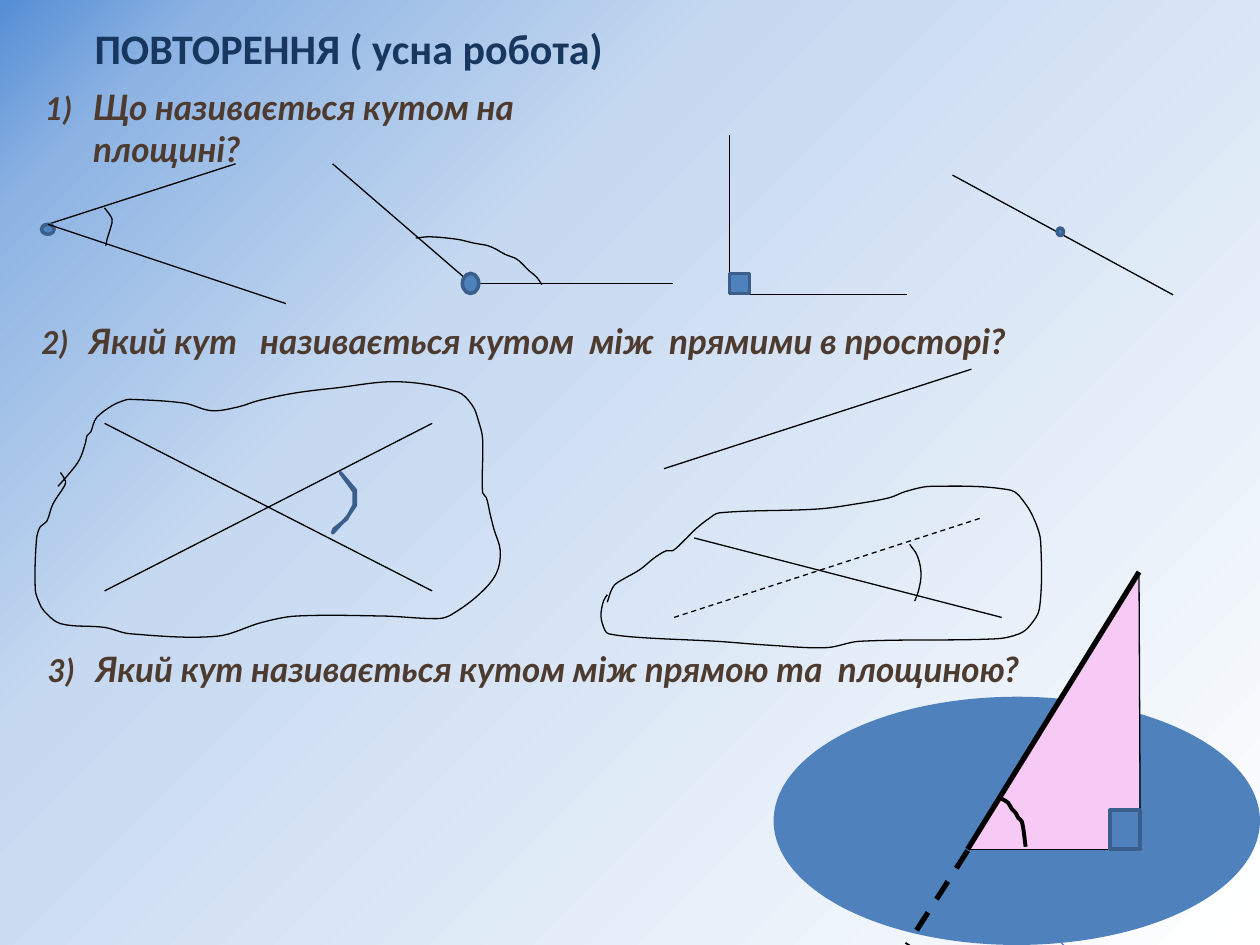
from math import dist, hypot

from lxml import etree
from pptx import Presentation
from pptx.dml.color import RGBColor
from pptx.enum.dml import MSO_LINE
from pptx.enum.shapes import MSO_CONNECTOR as Connector, MSO_SHAPE as Shape
from pptx.enum.text import MSO_ANCHOR as Anchor, PP_ALIGN as Align
from pptx.oxml import parse_xml
from pptx.oxml.ns import nsdecls, qn
from pptx.util import Inches, Pt

BLACK, BLUE, EDGE, PINK = "000000", "4F81BD", "3A5F8C", "F6CAF4"
NAVY, BROWN, STEEL = "17375E", "4E3B30", "4B7EBC"
STOPS = [(0, "558ED5"), (10, "8EB4E3"), (34, "C6D9F1"), (100, "FFFFFF")]
FLAT_BLOB = [
    (0.18, 0.93), (0.26, 0.84), (0.35, 0.72), (0.4, 0.58), (0.41, 0.53), (0.44, 0.5),
    (0.46, 0.44), (0.49, 0.38), (0.61, 0.29), (0.7, 0.25), (0.75, 0.24), (1.18, 0.27),
    (1.4, 0.33), (1.61, 0.3), (1.77, 0.25), (2.06, 0.19), (2.38, 0.15), (2.88, 0.1),
    (3.35, 0.18), (3.47, 0.29), (3.52, 0.42), (3.55, 0.55), (3.55, 0.98), (3.58, 1.02),
    (3.61, 1.15), (3.64, 1.27), (3.69, 1.44), (3.66, 1.62), (3.52, 1.79), (3.3, 1.95),
    (3.2, 1.98), (2.77, 1.96), (2.07, 1.96), (1.8, 2.01), (1.44, 2.12), (0.75, 2.1),
    (0.55, 2.05), (0.2, 2.02), (0.07, 1.92), (0.03, 1.85), (0, 1.75), (0.01, 1.35),
    (0.04, 1.25), (0.09, 1.21), (0.14, 1.07), (0.23, 0.93), (0.24, 0.89), (0.2, 0.82)]
SKEW_BLOB = [
    (0.05, 1.85), (0.08, 1.76), (0.11, 1.71), (0.17, 1.67), (0.31, 1.59), (0.42, 1.5),
    (0.52, 1.44), (0.57, 1.44), (0.66, 1.36), (0.75, 1.27), (0.85, 1.19), (0.94, 1.14),
    (1.72, 1.11), (2.02, 1.07), (2.29, 1.02), (2.42, 0.97), (2.62, 0.93), (3.25, 0.96),
    (3.37, 1.07), (3.45, 1.22), (3.49, 1.37), (3.48, 1.9), (3.4, 2.04), (3.32, 2.1),
    (3.14, 2.14), (2.05, 2.16), (1.79, 2.21), (1.32, 2.19), (0.92, 2.16), (0.32, 2.13),
    (0.06, 2.1), (0.03, 2.07), (0, 1.96), (0.02, 1.84), (0.05, 1.79)]


def color(value):
    return RGBColor.from_string(value)


def paint(shape, fill=None, edge=None, width=2):
    shape.shadow.inherit = False
    if fill:
        shape.fill.solid()
        shape.fill.fore_color.rgb = color(fill)
    else:
        shape.fill.background()
    if edge:
        shape.line.color.rgb = color(edge)
        shape.line.width = Pt(width)
    else:
        shape.line.fill.background()


def add_mark(page, box, kind, x, y, width, height, edge=EDGE):
    mark = page.shapes.add_shape(kind, Inches(box[0] + x), Inches(box[1] + y),
                                 Inches(width), Inches(height))
    paint(mark, BLUE, edge)


def add_line(page, box, start, end, width=0.75, dash=False, edge=BLACK):
    line = page.shapes.add_connector(
        Connector.STRAIGHT, Inches(box[0] + start[0]), Inches(box[1] + start[1]),
        Inches(box[0] + end[0]), Inches(box[1] + end[1]))
    line.line.color.rgb = color(edge)
    line.line.width = Pt(width)
    if dash:
        line.line.dash_style = MSO_LINE.DASH
    etree.SubElement(line._element.spPr, qn("a:effectLst"))


def add_outline(page, box, points, fill=None, edge=None, width=0.75, close=False):
    places = [(Inches(box[0] + x), Inches(box[1] + y)) for x, y in points]
    builder = page.shapes.build_freeform(*places[0])
    builder.add_line_segments(places[1:], close=close)
    outline = builder.convert_to_shape()
    paint(outline, fill, edge, width)
    return outline


def curve_points(points):
    result = [points[0]]
    padded = [points[0], *points, points[-1]]
    handles = []
    for before, here, after in zip(padded, padded[1:], padded[2:]):
        across, down = after[0] - before[0], after[1] - before[1]
        handles.append((across / hypot(across, down) / 3, down / hypot(across, down) / 3))
    for start, end, leave, arrive in zip(points, points[1:], handles, handles[1:]):
        reach = dist(start, end)
        result += [(start[0] + leave[0] * reach, start[1] + leave[1] * reach),
                   (end[0] - arrive[0] * reach, end[1] - arrive[1] * reach), end]
    return result


def add_curve(page, box, points, width=0.75):
    curve = add_outline(page, box, curve_points(points), edge=BLACK, width=width)
    segments = list(curve._element.iter(qn("a:lnTo")))
    for first in range(0, len(segments), 3):
        bend = etree.Element(qn("a:cubicBezTo"))
        segments[first].addprevious(bend)
        for segment in segments[first:first + 3]:
            bend.append(segment[0])
            segment.getparent().remove(segment)


def style_span(span, font, size, value, italic=False):
    span.font.name, span.font.size = font, Pt(size)
    span.font.bold, span.font.italic = True, italic
    span.font.color.rgb = color(value)


def set_background(page):
    page.background.fill.gradient()
    gradient = page._element.find(".//" + qn("a:gradFill"))
    stops = "".join(f'<a:gs pos="{spot * 1000}"><a:srgbClr val="{value}"/></a:gs>'
                    for spot, value in STOPS)
    gradient.getparent().replace(gradient, parse_xml(
        f'<a:gradFill {nsdecls("a")} rotWithShape="1"><a:gsLst>{stops}</a:gsLst>'
        '<a:path path="circle"><a:fillToRect r="100000" b="100000"/></a:path></a:gradFill>'))


def place_title(page, left, top, width, height):
    title = page.shapes.title
    title.left, title.top = Inches(left), Inches(top)
    title.width, title.height = Inches(width), Inches(height)
    frame = title.text_frame
    frame.text = "ПОВТОРЕННЯ ( усна робота)"
    frame.word_wrap = False
    frame.vertical_anchor = Anchor.TOP
    para = frame.paragraphs[0]
    para.alignment = Align.LEFT
    style_span(para.runs[0], "Calibri", 24, NAVY)


def place_question(page, number, text, left, top, width):
    box = page.shapes.add_textbox(Inches(left), Inches(top), Inches(width), Inches(0.44))
    box.text_frame.word_wrap = True
    para = box.text_frame.paragraphs[0]
    indent = Inches(0.38)
    properties = para._p.get_or_add_pPr()
    properties.set("marL", str(indent))
    properties.set("indent", str(-indent))
    tabs = etree.SubElement(properties, qn("a:tabLst"))
    etree.SubElement(tabs, qn("a:tab"), pos=str(Inches(0.32)), algn="l")
    for words, size in ((f"{number})\t", 18), (text, 20)):
        span = para.add_run()
        span.text = words
        style_span(span, "Lato", size, BROWN, italic=True)


def draw_acute_angle(page, *box):
    vertex = (0.05, 0.48)
    add_line(page, box, vertex, (1.54, 0))
    add_mark(page, box, Shape.OVAL, 0, 0.48, 0.1, 0.08)
    add_line(page, box, vertex, (1.94, 1.11))
    add_curve(page, box, [(0.5, 0.35), (0.56, 0.44), (0.55, 0.5), (0.52, 0.6), (0.51, 0.65)])


def draw_obtuse_angle(page, *box):
    vertex = (1.1, 0.95)
    add_curve(page, box, [(0.66, 0.59), (0.77, 0.58), (0.99, 0.6), (1.12, 0.63), (1.23, 0.65),
                          (1.3, 0.68), (1.37, 0.72), (1.45, 0.75), (1.48, 0.77), (1.53, 0.82),
                          (1.56, 0.85), (1.62, 0.9), (1.66, 0.96)])
    add_line(page, box, (0, 0), vertex)
    add_line(page, box, vertex, (2.7, 0.95))
    add_mark(page, box, Shape.OVAL, 1.03, 0.87, 0.13, 0.16)


def draw_right_angle(page, *box):
    vertex = (0, 1.27)
    add_line(page, box, (0, 0), vertex)
    add_line(page, box, vertex, (1.41, 1.27))
    add_mark(page, box, Shape.RECTANGLE, 0, 1.1, 0.16, 0.16)


def draw_straight_angle(page, *box):
    add_line(page, box, (0, 0), (1.75, 0.95))
    add_mark(page, box, Shape.OVAL, 0.83, 0.42, 0.05, 0.06)


def draw_crossing_lines(page, *box):
    add_line(page, box, (0.55, 0.43), (3.15, 1.76))
    add_line(page, box, (0.55, 1.76), (3.15, 0.43))
    add_outline(page, box, [(2.42, 0.82), (2.53, 0.97), (2.53, 1.08), (2.47, 1.19),
                            (2.37, 1.27), (2.36, 1.3), (2.48, 1.17), (2.54, 1.08),
                            (2.54, 0.96)], BLUE, EDGE, 2, close=True)
    add_curve(page, box, FLAT_BLOB)


def draw_skew_lines(page, *box):
    add_line(page, box, (0.58, 1.97), (3.02, 1.18), dash=True)
    add_line(page, box, (0.5, 0.79), (2.94, 0))
    add_line(page, box, (0.74, 1.34), (3.18, 1.97))
    add_curve(page, box, SKEW_BLOB)
    add_curve(page, box, [(2.45, 1.39), (2.51, 1.48), (2.54, 1.62), (2.52, 1.76), (2.49, 1.84)])


def draw_line_and_plane(page, *box):
    top, foot, corner = (2.9, 0), (1.54, 2.2), (2.9, 2.2)
    add_line(page, box, foot, (2.54, 3.2), edge=STEEL)
    add_mark(page, box, Shape.OVAL, 0, 0.99, 3.86, 1.97, edge=None)
    add_outline(page, box, [top, corner, foot], PINK, close=True)
    add_line(page, box, top, foot, 3)
    add_line(page, box, top, (2.91, 2.2))
    add_line(page, box, (1.54, 2.21), (1.06, 2.96), 3, dash=True)
    add_line(page, box, foot, corner)
    add_mark(page, box, Shape.RECTANGLE, 2.67, 1.89, 0.24, 0.31)
    add_curve(page, box, [(1.81, 1.8), (1.86, 1.83), (1.89, 1.88), (1.92, 1.91), (1.94, 1.95),
                          (1.97, 1.98), (2, 2.18)], 2.25)


def main():
    deck = Presentation()
    deck.slide_width, deck.slide_height = Inches(10), Inches(7.5)
    page = deck.slides.add_slide(deck.slide_layouts[5])
    set_background(page)
    place_title(page, 0.65, 0.13, 4.27, 0.5)
    place_question(page, 1, "Що називається кутом на площині?", 0.26, 0.63, 4.99)
    place_question(page, 2, "Який кут   називається кутом  між  прямими в просторі?",
                   0.23, 2.49, 9.2)
    place_question(page, 3, "Який кут називається кутом між прямою та  площиною?",
                   0.28, 5.09, 8.99)
    draw_acute_angle(page, 0.33, 1.3)
    draw_obtuse_angle(page, 2.64, 1.3)
    draw_right_angle(page, 5.79, 1.07)
    draw_straight_angle(page, 7.56, 1.39)
    draw_crossing_lines(page, 0.28, 2.93)
    draw_skew_lines(page, 4.77, 2.93)
    draw_line_and_plane(page, 6.14, 4.54)
    deck.save("out.pptx")


if __name__ == "__main__":
    main()
